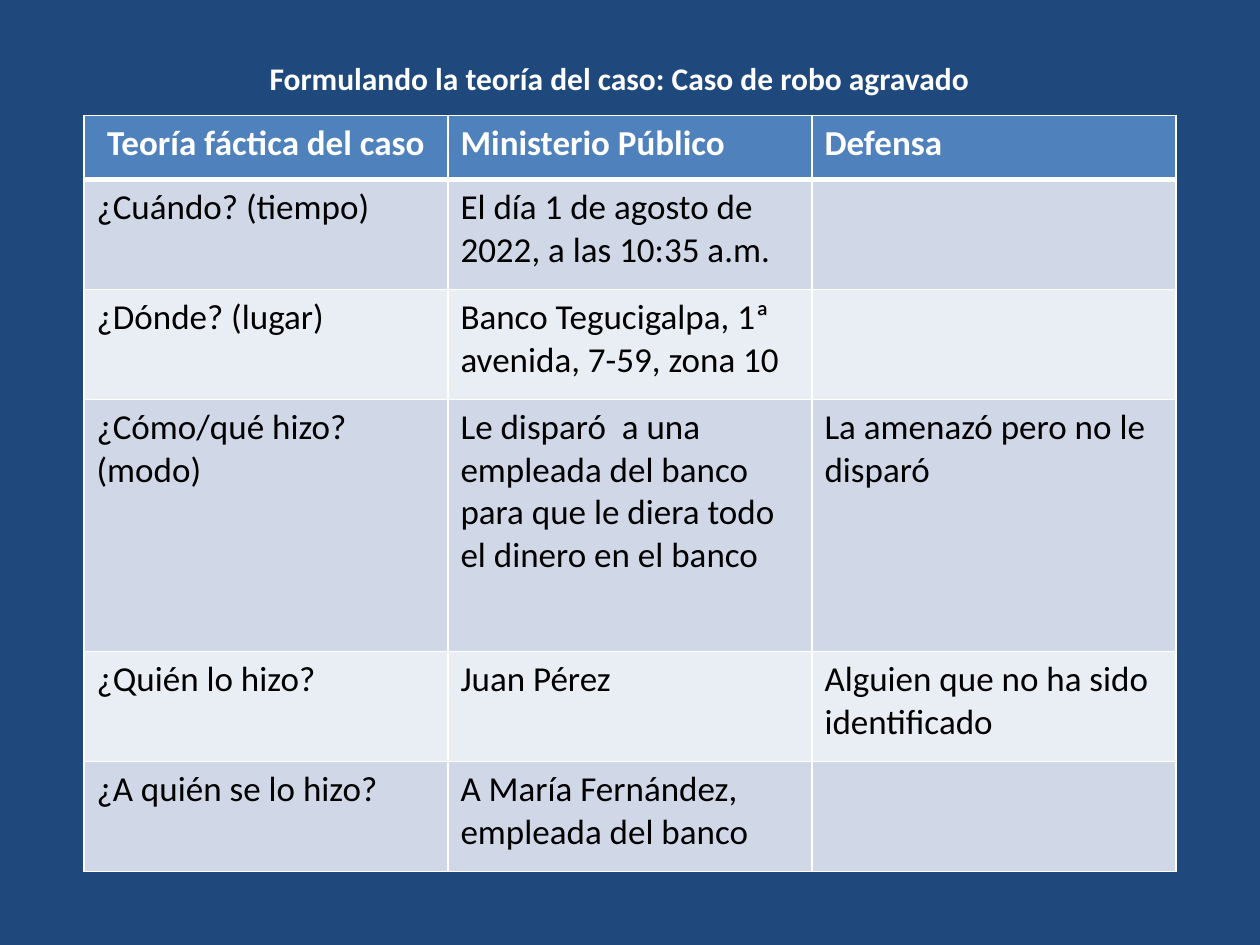
import pptx
import pptx.dml.color
import pptx.enum.text
import pptx.oxml
import pptx.oxml.ns
import pptx.util
from pptx.util import Pt

COLORS = {
    "background": "1F497D",
    "header": "4F81BD",
    "odd_row": "D0D8E8",
    "even_row": "E9EDF4",
    "light": "FFFFFF",
    "dark": "000000",
}
CENTER = pptx.enum.text.PP_ALIGN.CENTER
LEFT = pptx.enum.text.PP_ALIGN.LEFT
TITLE_FORMAT = {"name": "Calibri", "size": Pt(18), "bold": True}
HEADER_FORMAT = {"name": "Calibri", "size": Pt(20), "bold": True}
BODY_FORMAT = {"name": "Calibri", "size": Pt(20), "bold": False}

COLUMN_WIDTH = 208
ROW_HEIGHTS = [36.6, 62.85, 62.85, 144, 62.85, 62.85]
ROWS = [
    ["Teoría fáctica del caso", "Ministerio Público", "Defensa"],
    ["¿Cuándo? (tiempo)", "El día 1 de agosto de 2022, a las 10:35 a.m.", ""],
    ["¿Dónde? (lugar)", "Banco Tegucigalpa, 1ª avenida, 7-59, zona 10", ""],
    ["¿Cómo/qué hizo? (modo)",
     "Le disparó  a una empleada del banco para que le diera todo el dinero en el banco",
     "La amenazó pero no le disparó"],
    ["¿Quién lo hizo?", "Juan Pérez", "Alguien que no ha sido identificado"],
    ["¿A quién se lo hizo?", "A María Fernández, empleada del banco", ""],
]


def rgb(name):
    return pptx.dml.color.RGBColor.from_string(COLORS[name])


def paint(fill, color):
    fill.solid()
    fill.fore_color.rgb = rgb(color)


def write(frame, text, formats, color, alignment):
    para = frame.paragraphs[0]
    para.alignment = alignment
    if text:
        span = para.add_run()
        span.text = text
        for name, value in formats.items():
            setattr(span.font, name, value)
        span.font.color.rgb = rgb(color)


def add_borders(cell, widths):
    properties = cell._tc.get_or_add_tcPr()
    for side, width in widths.items():
        properties.append(pptx.oxml.parse_xml(
            f'<a:ln{side} {pptx.oxml.ns.nsdecls("a")} w="{Pt(width)}">'
            f'<a:solidFill><a:srgbClr val="{COLORS["light"]}"/></a:solidFill>'
            f'</a:ln{side}>'))


def add_title(page, text):
    box = page.shapes.add_textbox(Pt(90), Pt(30), Pt(528), Pt(29))
    box.text_frame.word_wrap = True
    write(box.text_frame, text, TITLE_FORMAT, "light", CENTER)


def add_case_table(page):
    columns = len(ROWS[0])
    table = page.shapes.add_table(
        len(ROWS), columns, Pt(48), Pt(66),
        Pt(COLUMN_WIDTH * columns), Pt(sum(ROW_HEIGHTS))).table
    for column in table.columns:
        column.width = Pt(COLUMN_WIDTH)
    for row_index, texts in enumerate(ROWS):
        table.rows[row_index].height = Pt(ROW_HEIGHTS[row_index])
        is_header = row_index == 0
        fill = "header" if is_header else "odd_row" if row_index % 2 else "even_row"
        widths = {"L": 1, "R": 1, "T": 3 if row_index == 1 else 1,
                  "B": 3 if is_header else 1}
        for column_index, text in enumerate(texts):
            cell = table.cell(row_index, column_index)
            add_borders(cell, widths)
            paint(cell.fill, fill)
            write(cell.text_frame, text,
                  HEADER_FORMAT if is_header else BODY_FORMAT,
                  "light" if is_header else "dark",
                  CENTER if is_header and column_index == 0 else LEFT)


def main():
    deck = pptx.Presentation()
    deck.slide_width, deck.slide_height = Pt(720), Pt(540)
    page = deck.slides.add_slide(deck.slide_layouts[6])
    paint(page.background.fill, "background")
    add_case_table(page)
    add_title(page, "Formulando la teoría del caso: Caso de robo agravado")
    deck.save("out.pptx")


if __name__ == "__main__":
    main()
